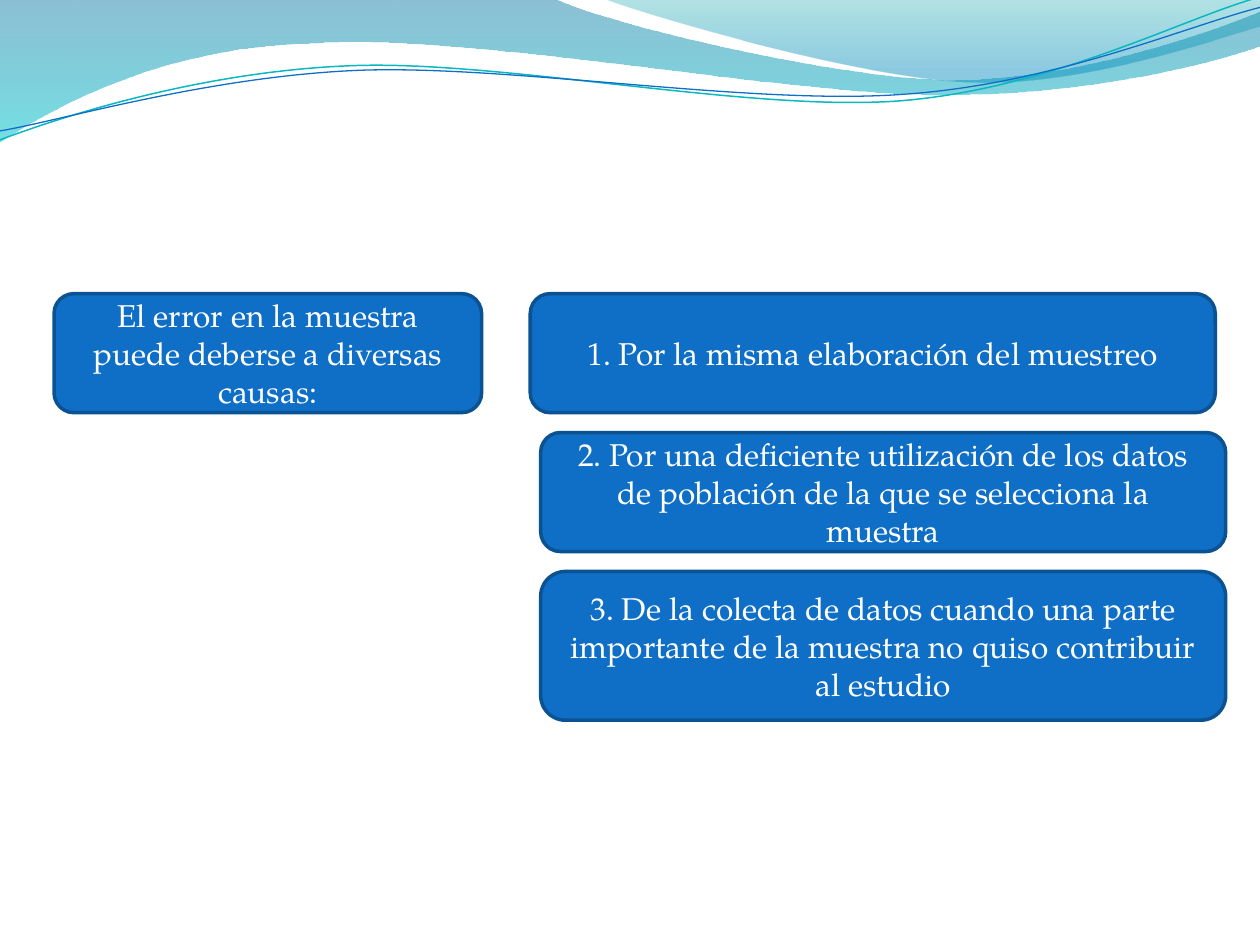
import pptx
import pptx.dml.color
import pptx.enum.shapes
import pptx.enum.text
import pptx.oxml.ns
import pptx.util
from lxml import etree
from pptx.oxml.ns import qn
from pptx.util import Cm

COLORS = {
    "deep": "0074A1", "aqua": "00C6CF", "teal": "00A1A9", "sky": "008BBF",
    "turquoise": "0AB8BF", "blue": "0F6FC6", "navy": "0B5292", "white": "FFFFFF",
}
FONT = "TeX Gyre Pagella"
STRAND_ANGLE = 357.3

BANDS = [
    ([(0, 0), (11.18, -0.03), (12.09, 0.43, 16.87, 1.6, 19.25, 1.6),
      (21.67, 1.6, 24.33, 0.66, 25.4, 0.23), (25.43, 0.91),
      (24.97, 1.12, 22.1, 1.93, 18.95, 1.91), (15.8, 1.91, 9.7, 0.71, 6.53, 0.86),
      (3.28, 0.91, 1.17, 2.11, -0.03, 2.87)],
     [(0, "deep", 45), (1, "aqua", 55)]),
    ([(12.17, -0.03), (12.93, 0.28, 17.32, 1.57, 19.53, 1.65),
      (21.74, 1.75, 24.41, 0.81, 25.4, 0.53), (25.4, 0)],
     [(0, "teal", 30), (0.8, "sky", 45)]),
]
STRANDS = [
    ([(-0.05, 2.22), (1.19, 1.82, 4.02, 1.04, 7.05, 1.06),
      (10.05, 1.07, 15.02, 2.37, 18.08, 2.29), (21.13, 2.2, 23.86, 0.91, 25.41, 0.55)],
     "turquoise", 0.85),
    ([(-0.04, 2.04), (1.16, 1.9, 4.17, 1.15, 7.2, 1.16),
      (10.25, 1.18, 15.13, 2.25, 18.19, 2.16), (21.22, 2.1, 23.93, 1.06, 25.45, 0.75)],
     "blue", 0.75),
]
CAUSES = [
    ("1. Por la misma elaboración del muestreo", 0, 2.4),
    ("2. Por una deficiente utilización de los datos de población de la que se "
     "selecciona la muestra", 0.21, 2.4),
    ("3. De la colecta de datos cuando una parte importante de la muestra no quiso "
     "contribuir al estudio", 0.21, 3),
]


def rgb(name):
    """Return the named deck colour."""
    return pptx.dml.color.RGBColor.from_string(COLORS[name])


def add_outline(page, left, top, outline, close):
    """Draw a freeform of lines (pairs) and cubic curves (sextets)."""
    points = [(Cm(left + x), Cm(top + y))
              for part in outline for x, y in zip(part[::2], part[1::2])]
    builder = page.shapes.build_freeform(*points[0], scale=1.0)
    builder.add_line_segments(points[1:], close=close)
    shape = builder.convert_to_shape()
    shape.shadow.inherit = False
    segments = iter(list(shape._element.iter(qn("a:lnTo"))))
    for part in outline[1:]:
        curve = next(segments)
        if len(part) == 6:
            curve.tag = qn("a:cubicBezTo")
            for _ in range(2):
                control = next(segments)
                curve.append(control[0])
                control.getparent().remove(control)
    return shape


def fade(shape, stops):
    """Fill a shape from top to bottom with translucent colours."""
    shape.fill.gradient()
    shape.fill.gradient_angle = 270
    for stop, (position, color, _) in zip(shape.fill.gradient_stops, stops):
        stop.position = position
        stop.color.rgb = rgb(color)
    for element, (_, _, opacity) in zip(shape._element.spPr.iter(qn("a:srgbClr")), stops):
        etree.SubElement(element, qn("a:alpha"), val=str(opacity * 1000))


def add_waves(page, left, top):
    """Place the wave bands and thin strands of the header."""
    for outline, stops in BANDS:
        band = add_outline(page, left, top, outline, True)
        fade(band, stops)
        band.line.fill.background()
    for outline, color, width in STRANDS:
        strand = add_outline(page, left, top, outline, False)
        strand.rotation = STRAND_ANGLE
        strand.fill.background()
        strand.line.color.rgb = rgb(color)
        strand.line.width = pptx.util.Pt(width)


def add_card(page, left, top, width, height, text):
    """Place a rounded blue card with centred text."""
    card = page.shapes.add_shape(
        pptx.enum.shapes.MSO_SHAPE.ROUNDED_RECTANGLE,
        Cm(left), Cm(top), Cm(width), Cm(height))
    card.shadow.inherit = False
    card.fill.solid()
    card.fill.fore_color.rgb = rgb("blue")
    card.line.color.rgb = rgb("navy")
    card.line.width = pptx.util.Pt(2)
    frame = card.text_frame
    frame.word_wrap = True
    frame.vertical_anchor = pptx.enum.text.MSO_ANCHOR.MIDDLE
    para = frame.paragraphs[0]
    para.text = text
    para.alignment = pptx.enum.text.PP_ALIGN.CENTER
    para.font.name = FONT
    para.font.size = pptx.util.Pt(18)
    para.font.color.rgb = rgb("white")


def add_causes(page, left, top, width, gap=0.4):
    """Stack the cause cards with equal gaps."""
    for text, indent, height in CAUSES:
        add_card(page, left + indent, top, width, height, text)
        top += height + gap


def main():
    """Build and save the deck."""
    deck = pptx.Presentation()
    deck.slide_width, deck.slide_height = Cm(25.4), Cm(19.05)
    page = deck.slides.add_slide(deck.slide_layouts.get_by_name("Blank"))
    add_waves(page, 0, 0)
    add_card(page, 1.09, 5.92, 8.62, 2.4,
             "El error en la muestra puede deberse a diversas causas:")
    add_causes(page, 10.69, 5.92, 13.81)
    deck.save("out.pptx")


if __name__ == "__main__":
    main()
